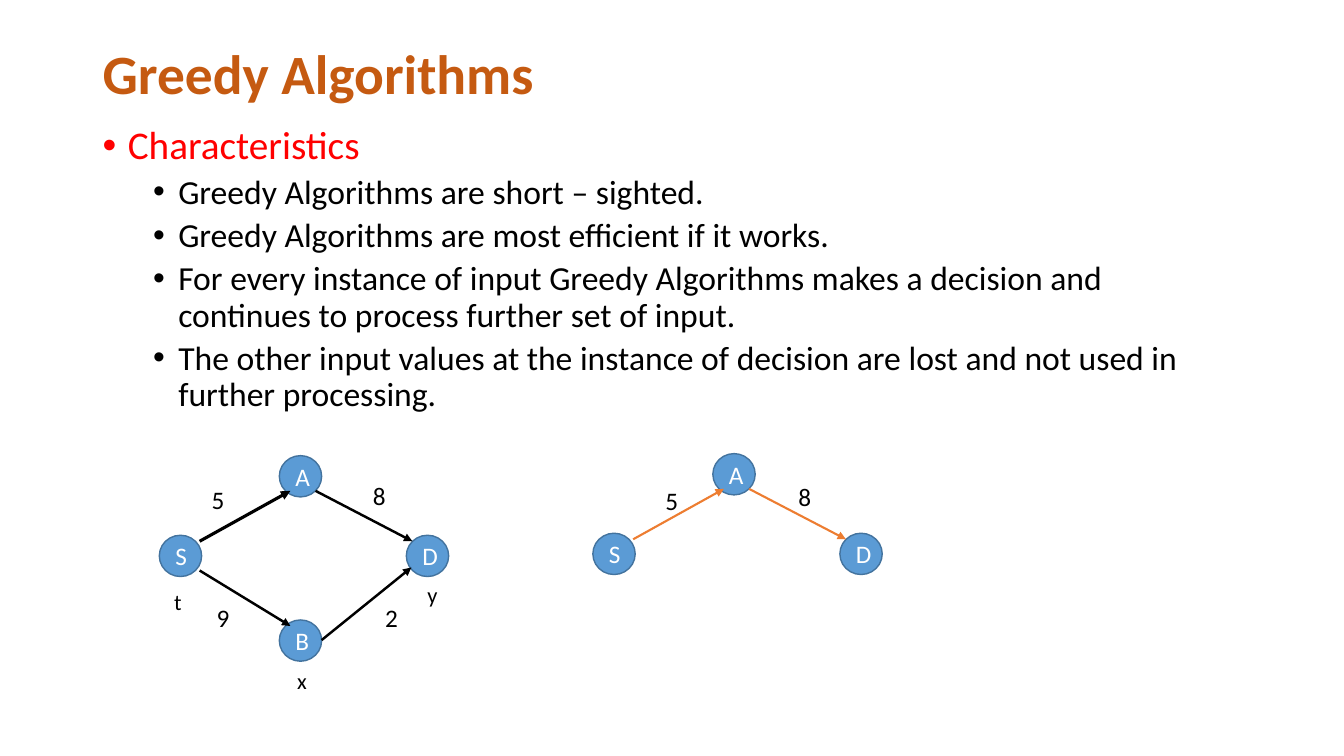
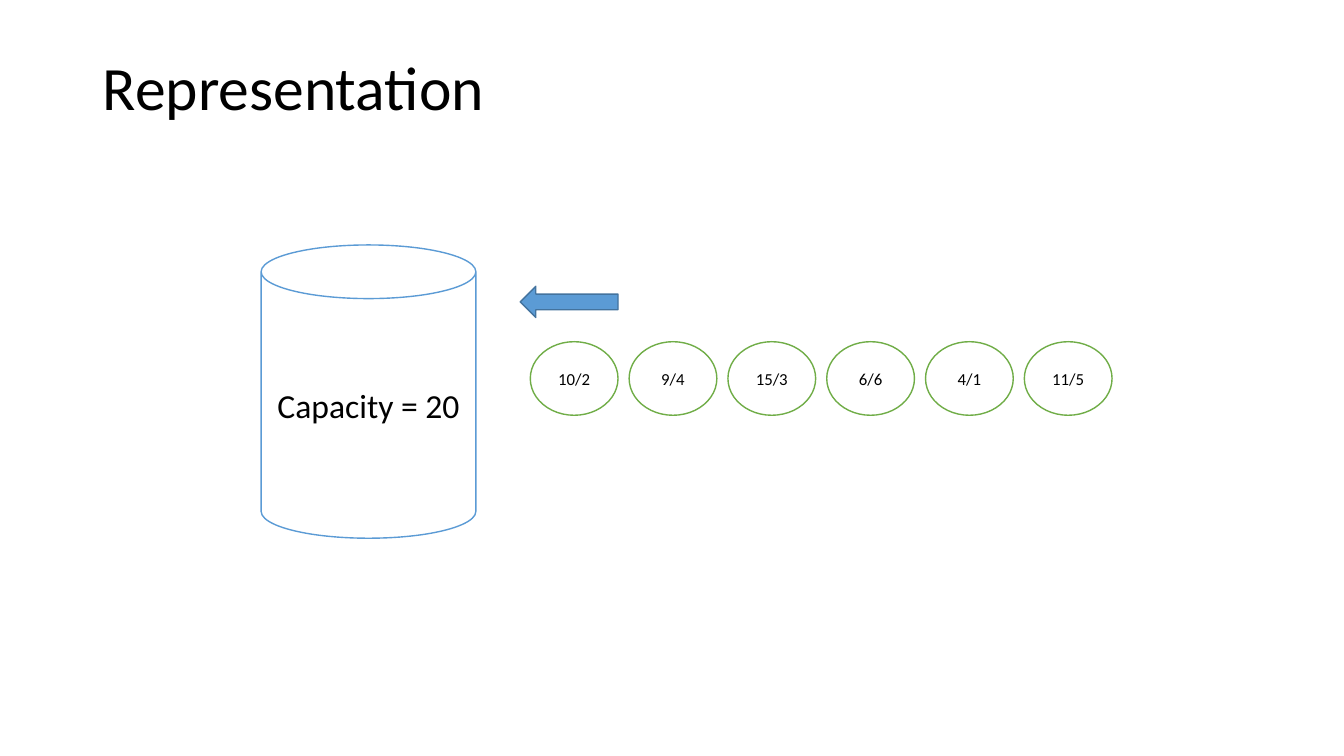
from dataclasses import dataclass

from lxml import etree
from pptx import Presentation
from pptx.dml.color import RGBColor
from pptx.enum.shapes import MSO_CONNECTOR, MSO_SHAPE
from pptx.enum.text import MSO_ANCHOR, PP_ALIGN
from pptx.oxml.ns import qn
from pptx.util import Inches, Pt

ELLIPSE, CAN, LEFT_ARROW = MSO_SHAPE.OVAL, MSO_SHAPE.CAN, MSO_SHAPE.LEFT_ARROW
STRAIGHT = MSO_CONNECTOR.STRAIGHT
CENTER = PP_ALIGN.CENTER
TOP, MIDDLE = MSO_ANCHOR.TOP, MSO_ANCHOR.MIDDLE


@dataclass(frozen=True)
class Theme:
    font: str = "Calibri"
    black: str = "000000"
    white: str = "FFFFFF"
    blue: str = "5B9BD5"
    dark_blue: str = "43739E"
    orange: str = "ED7D31"
    rust: str = "C55A11"
    red: str = "FF0000"
    green: str = "70AD47"
    title: float = 44
    compact_title: float = 39.6
    heading: float = 28
    body: float = 24
    node: float = 18
    vertex: float = 16
    item: float = 12
    outline: float = 1


THEME = Theme()

GREEDY_TITLE = "Greedy Algorithms"
HEADING = "Characteristics"
POINTS = [
    "Greedy Algorithms are short – sighted.",
    "Greedy Algorithms are most efficient if it works.",
    "For every instance of input Greedy Algorithms makes a decision and "
    "continues to process further set of input.",
    "The other input values at the instance of decision are lost and not used in "
    "further processing.",
]
NODE_SIZE = (0.42, 0.41)
NODES = {"S": (1.58, 5.31), "A": (2.77, 4.52), "B": (2.77, 6.15), "D": (4.03, 5.31)}
EDGES = {
    "SA": (1.98, 5.37, 2.88, 4.87),
    "SB": (1.98, 5.66, 2.88, 6.21),
    "AD": (3.13, 4.87, 4.09, 5.37),
    "BD": (3.19, 6.35, 4.08, 5.63),
}
GRAPHS = [
    {
        "offset": (0, 0),
        "nodes": "SABD",
        "color": THEME.black,
        "edges": {"SA": 2.25, "SB": 1.75, "AD": 1.75, "BD": 1.75},
        "weights": [("5", 2, 4.76, 0.26), ("9", 2.05, 5.93, 0.26),
                    ("8", 3.6, 4.72, 0.32), ("2", 3.76, 5.93, 0.16)],
        "vertices": [("t", 1.63, 5.79, 0.26), ("x", 2.85, 6.57, 0.26),
                     ("y", 4.14, 5.72, 0.26)],
    },
    {
        "offset": (4.3, -0.02),
        "nodes": "SAD",
        "color": THEME.orange,
        "edges": {"SA": 1.5, "AD": 1.5},
        "weights": [("5", 6.5, 4.77, 0.26), ("8", 7.82, 4.73, 0.32)],
        "vertices": [],
    },
]

REPRESENTATION_TITLE = "Representation"
CAPACITY = "Capacity = 20"
ITEMS = ["10/2", "9/4", "15/3", "6/6", "4/1", "11/5"]
ITEM_LEFT, ITEM_TOP, ITEM_PITCH = 5.26, 3.39, 0.98
ITEM_SIZE = (0.87, 0.73)


def color_of(value):
    return RGBColor.from_string(value)


def write(paragraph, text, size, color, bold=False, **paragraph_format):
    run = paragraph.add_run()
    run.text = text
    font_format = {"name": THEME.font, "size": Pt(size), "bold": bold}
    for name, value in font_format.items():
        setattr(run.font, name, value)
    run.font.color.rgb = color_of(color)
    for name, value in paragraph_format.items():
        setattr(paragraph, name, value)


def add_text_box(slide, box, anchor=TOP):
    frame = slide.shapes.add_textbox(*map(Inches, box)).text_frame
    frame.word_wrap = True
    frame.vertical_anchor = anchor
    return frame


def add_title(slide, text, height, size, color, bold=False):
    frame = add_text_box(slide, (0.92, 0.4, 11.5, height), MIDDLE)
    write(frame.paragraphs[0], text, size, color, bold, line_spacing=0.9)


def add_bullet(paragraph, indent):
    properties = paragraph._p.get_or_add_pPr()
    properties.set("marL", str(Inches(indent)))
    properties.set("indent", str(Inches(-0.25)))
    etree.SubElement(properties, qn("a:buFont")).set("typeface", "Arial")
    etree.SubElement(properties, qn("a:buChar")).set("char", "•")


def add_points(slide):
    frame = add_text_box(slide, (0.92, 1.2, 11.5, 5.36))
    heading = frame.paragraphs[0]
    write(heading, HEADING, THEME.heading, THEME.red, line_spacing=0.9, space_before=Pt(10))
    add_bullet(heading, 0.25)
    for point in POINTS:
        paragraph = frame.add_paragraph()
        write(paragraph, point, THEME.body, THEME.black,
              level=1, line_spacing=0.9, space_before=Pt(5))
        add_bullet(paragraph, 0.75)


def add_figure(slide, kind, box, fill, line, text="", size=THEME.node, color=THEME.black):
    shape = slide.shapes.add_shape(kind, *map(Inches, box))
    shape.shadow.inherit = False
    shape.fill.solid()
    shape.fill.fore_color.rgb = color_of(fill)
    shape.line.color.rgb = color_of(line)
    shape.line.width = Pt(THEME.outline)
    if text:
        shape.text_frame.vertical_anchor = MIDDLE
        write(shape.text_frame.paragraphs[0], text, size, color, alignment=CENTER)


def add_arrow(slide, ends, width, color):
    connector = slide.shapes.add_connector(STRAIGHT, *map(Inches, ends))
    connector.line.color.rgb = color_of(color)
    connector.line.width = Pt(width)
    etree.SubElement(connector.line._get_or_add_ln(), qn("a:tailEnd")).set("type", "triangle")
    etree.SubElement(connector._element.spPr, qn("a:effectLst"))


def add_graph(slide, graph):
    across, down = graph["offset"]
    for name in graph["nodes"]:
        left, top = NODES[name]
        add_figure(slide, ELLIPSE, (left + across, top + down, *NODE_SIZE),
                   THEME.blue, THEME.dark_blue, name, THEME.node, THEME.white)
    for edge, width in graph["edges"].items():
        x1, y1, x2, y2 = EDGES[edge]
        add_arrow(slide, (x1 + across, y1 + down, x2 + across, y2 + down),
                  width, graph["color"])
    for group, size, height in (("weights", THEME.node, 0.4), ("vertices", THEME.vertex, 0.37)):
        for text, left, top, width in graph[group]:
            frame = add_text_box(slide, (left, top, width, height))
            write(frame.paragraphs[0], text, size, THEME.black)


def build_greedy(slide):
    add_title(slide, GREEDY_TITLE, 0.71, THEME.compact_title, THEME.rust, bold=True)
    add_points(slide)
    for graph in GRAPHS:
        add_graph(slide, graph)


def build_representation(slide):
    add_title(slide, REPRESENTATION_TITLE, 1, THEME.title, THEME.black)
    add_figure(slide, CAN, (2.59, 2.43, 2.13, 2.91), THEME.white, THEME.blue,
               CAPACITY, THEME.body)
    for index, item in enumerate(ITEMS):
        left = ITEM_LEFT + index * ITEM_PITCH
        add_figure(slide, ELLIPSE, (left, ITEM_TOP, *ITEM_SIZE), THEME.white, THEME.green,
                   item, THEME.item)
    add_figure(slide, LEFT_ARROW, (5.16, 2.84, 0.97, 0.31), THEME.blue, THEME.dark_blue)


def main():
    presentation = Presentation()
    presentation.slide_width, presentation.slide_height = Inches(13.33), Inches(7.5)
    blank_layout = presentation.slide_layouts[6]
    for build in (build_greedy, build_representation):
        build(presentation.slides.add_slide(blank_layout))
    presentation.save("out.pptx")


if __name__ == "__main__":
    main()
